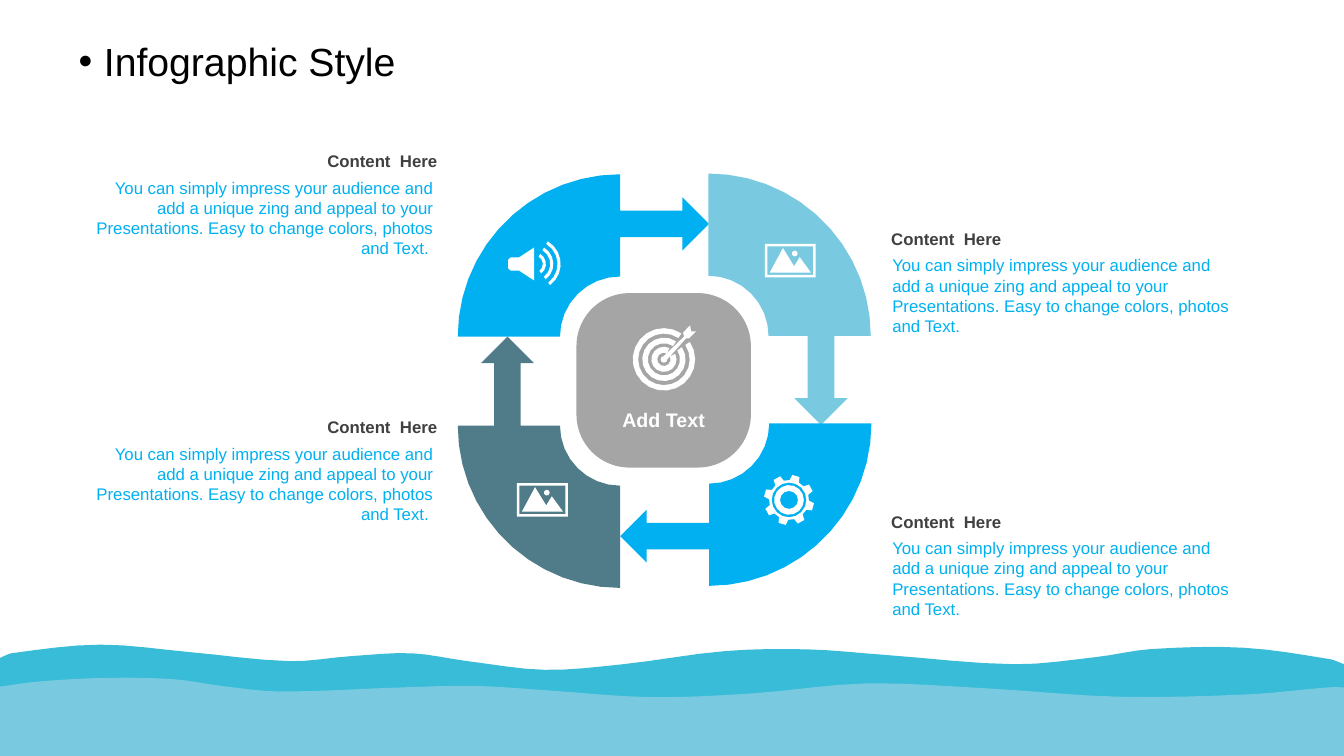
import math

import lxml.etree
import pptx
import pptx.dml.color
import pptx.enum.shapes
import pptx.enum.text
import pptx.oxml.ns
import pptx.util

Pt = pptx.util.Pt
RGBColor = pptx.dml.color.RGBColor
ALIGN = pptx.enum.text.PP_ALIGN
ANCHOR = pptx.enum.text.MSO_ANCHOR
qn = pptx.oxml.ns.qn

BLACK = RGBColor(0x00, 0x00, 0x00)
WHITE = RGBColor(0xFF, 0xFF, 0xFF)
DARK_GRAY = RGBColor(0x40, 0x40, 0x40)
GRAY = RGBColor(0x80, 0x80, 0x80)
BLUE = RGBColor(0x00, 0xB0, 0xF0)
LIGHT_BLUE = RGBColor(0x79, 0xCA, 0xE0)
SEA_BLUE = RGBColor(0x38, 0xBC, 0xD7)
SLATE = RGBColor(0x50, 0x7C, 0x89)

WIDTH, HEIGHT = 960, 540
DESCRIPTION = ("You can simply impress your audience and add a unique zing and appeal "
               "to your Presentations. Easy to change colors, photos and Text.")

BACK_WAVE = [(0, 470), (8.6, 466.6), (71.5, 460.5), (135, 465.8), (207, 472.3),
             (251, 468.7), (294, 466.7), (334, 472.3), (389, 478.5), (445, 474.5),
             (518, 465.1), (577, 463.9), (634, 468), (725, 474.5), (783, 469.4),
             (822, 463.7), (888, 462.7), (950, 470.9), (960, 474.5)]
FRONT_WAVE = [(0, 490.5), (29, 486.7), (78, 484.2), (125, 485.3), (160.5, 490.3),
              (200, 494), (288, 491), (340, 490), (391.5, 493.2), (464, 498),
              (536.5, 495.4), (618.5, 488.2), (706, 491.8), (798.5, 497.7),
              (892, 496), (949, 491), (960, 491)]

# Corner of each quarter, clockwise from top left, with its colour
QUARTERS = [((443, 240.5), BLUE), ((506, 240), LIGHT_BLUE),
            ((506.5, 302.5), BLUE), ((443, 304), SLATE)]

# Left and top of each text block, with its alignment and end of text
TEXT_BLOCKS = [(629.5, 160, ALIGN.LEFT, ""), (629.5, 362, ALIGN.LEFT, ""),
               (57.5, 104.4, ALIGN.RIGHT, " "), (57.5, 294.5, ALIGN.RIGHT, " ")]


# Outlines, as lists of points

def arc(radius, start=0, end=360, center=(0, 0)):
    """Larger arcs get finer steps, so that all look equally round."""
    steps = math.ceil(abs(end - start) * math.sqrt(radius) / 80)
    angles = [math.radians(start + (end - start) * i / steps) for i in range(steps + 1)]
    return [(center[0] + radius * math.cos(a), center[1] + radius * math.sin(a))
            for a in angles]


def band(outer, inner, start, end, center=(0, 0)):
    return arc(outer, start, end, center) + arc(inner, end, start, center)


def rectangle(left, top, right, bottom):
    return [(left, top), (right, top), (right, bottom), (left, bottom)]


def smooth_curve(anchors, steps=4):
    """Catmull-Rom curve, with slopes scaled to uneven spacing."""
    last = len(anchors) - 1
    slopes = []
    for i in range(last + 1):
        (x0, y0), (x1, y1) = anchors[max(i - 1, 0)], anchors[min(i + 1, last)]
        slopes.append((y1 - y0) / (x1 - x0))
    points = [anchors[0]]
    for i in range(last):
        (x0, y0), (x1, y1) = anchors[i], anchors[i + 1]
        span = x1 - x0
        for t in (step / steps for step in range(1, steps + 1)):
            y = ((2 * t**3 - 3 * t**2 + 1) * y0 + (3 * t**2 - 2 * t**3) * y1
                 + span * ((t**3 - 2 * t**2 + t) * slopes[i] + (t**3 - t**2) * slopes[i + 1]))
            points.append((x0 + span * t, y))
    return points


def quarter_outline(turns):
    arrow = [(0, -90), (44.5, -90), (44.5, -99.5), (63.5, -80.5),
             (44.5, -61.5), (44.5, -71), (0, -71)]
    points = arc(116, 180, 270) + arrow + arc(43, 270, 180)
    for _ in range(turns):
        points = [(-y, x) for x, y in points]
    return points


def speaker_icon():
    horn = [(18.7, -11.8), (18.7, 11.8), (8, 4.8), (2, 4.8),
            (0, 3), (0, -3), (2, -4.8), (8, -4.8)]
    return [horn] + [band(radius, radius - 2.2, -59, 53, (18.7, 0))
                     for radius in (8.4, 13.7, 18.9)]


def photo_icon():
    mountains = [(13, 3), (21, 16), (25, 9.5), (33, 20.5), (3.6, 20.5)]
    return [rectangle(0, 0, 36.4, 24), rectangle(1.8, 1.8, 34.6, 22.2),
            mountains, arc(2.1, center=(21.4, 6.9))]


def target_icon():
    rings = [(22.3, 18.4, 11), (15.5, 11.5, 11), (9, 4.8, 19)]
    dart = arc(2.4, 0, 270) + [(14.4, -16.3), (13.7, -19.2), (18.7, -24.3), (19.4, -20),
                               (23, -20), (18, -15), (15.8, -15)]
    return [band(outer, inner, gap - 45, 315 - gap) for outer, inner, gap in rings] + [dart]


def gear_icon():
    teeth = []
    for tooth in range(8):
        middle = -74 + 45 * tooth
        teeth += arc(18, middle - 8.5, middle + 8.5) + arc(14.2, middle + 14, middle + 31)
    return [teeth, arc(12.4), arc(10.6), arc(6.4)]


# Slide elements

def fill_plain(shape, color):
    shape.shadow.inherit = False
    shape.fill.solid()
    shape.fill.fore_color.rgb = color
    shape.line.fill.background()


def add_outline(slide, outlines, color, left=0, top=0):
    placed = [[(Pt(left + x), Pt(top + y)) for x, y in points] for points in outlines]
    builder = slide.shapes.build_freeform(*placed[0][0], scale=1.0)
    for index, points in enumerate(placed):
        if index:
            builder.move_to(*points[0])
        builder.add_line_segments(points[1:], close=True)
    fill_plain(builder.convert_to_shape(), color)


def format_text(paragraph, size, color, bold=False, align=ALIGN.LEFT):
    paragraph.alignment = align
    for run in paragraph.runs:
        run.font.name = "Arial"
        run.font.size = Pt(size)
        run.font.bold = bold
        run.font.color.rgb = color


def add_text(slide, text, box, size, color, bold=False, align=ALIGN.LEFT):
    shape = slide.shapes.add_textbox(*(Pt(length) for length in box))
    shape.text_frame.word_wrap = True
    shape.text_frame.text = text
    format_text(shape.text_frame.paragraphs[0], size, color, bold, align)


def add_text_block(slide, left, top, align, ending):
    add_text(slide, DESCRIPTION + ending, (left + 0.75, top + 18.7, 258.5, 65.5),
             12, BLUE, align=align)
    add_text(slide, "Content  Here", (left, top, 262, 21.6), 12, DARK_GRAY, True, align)


def format_title(slide, text):
    title = slide.shapes.title
    title.left, title.top, title.width, title.height = Pt(49), Pt(26.6), Pt(911), Pt(57)
    title.text_frame.text = text
    title.text_frame.vertical_anchor = ANCHOR.TOP
    paragraph = title.text_frame.paragraphs[0]
    paragraph.line_spacing = 0.9
    format_text(paragraph, 28, BLACK)
    properties = paragraph._p.get_or_add_pPr()
    properties.set("marL", str(Pt(18)))
    properties.set("indent", str(Pt(-18)))
    lxml.etree.SubElement(properties, qn("a:buFont"), typeface="Arial")
    lxml.etree.SubElement(properties, qn("a:buChar"), char="•")


def add_center(slide):
    side = Pt(124.6)
    shape = slide.shapes.add_shape(pptx.enum.shapes.MSO_SHAPE.ROUNDED_RECTANGLE,
                                   Pt(411.8), Pt(209.4), side, side)
    shape.adjustments[0] = 0.304
    fill_plain(shape, GRAY)
    color = shape._element.spPr.find(qn("a:solidFill")).find(qn("a:srgbClr"))
    lxml.etree.SubElement(color, qn("a:alpha"), val="70000")
    add_text(slide, "Add Text", (430.5, 288, 87, 24.5), 14, WHITE, True, ALIGN.CENTER)


def main():
    presentation = pptx.Presentation()
    presentation.slide_width, presentation.slide_height = Pt(WIDTH), Pt(HEIGHT)
    slide = presentation.slides.add_slide(presentation.slide_layouts[5])

    # Waves and title
    for wave, bottom, color in ((BACK_WAVE, 499, SEA_BLUE), (FRONT_WAVE, HEIGHT, LIGHT_BLUE)):
        add_outline(slide, [smooth_curve(wave) + [(WIDTH, bottom), (0, bottom)]], color)
    format_title(slide, "Infographic Style")

    # Cycle of quarters around the centre
    for turns, (corner, color) in enumerate(QUARTERS):
        add_outline(slide, [quarter_outline(turns)], color, *corner)
    add_center(slide)

    # Text blocks
    for block in TEXT_BLOCKS:
        add_text_block(slide, *block)

    # Icons
    for icon, left, top in ((speaker_icon(), 362.9, 188.6), (photo_icon(), 369.2, 345),
                            (target_icon(), 474.3, 256.7), (gear_icon(), 563.6, 357.1),
                            (photo_icon(), 546.3, 174.2)):
        add_outline(slide, icon, WHITE, left, top)

    presentation.save("out.pptx")


if __name__ == "__main__":
    main()
